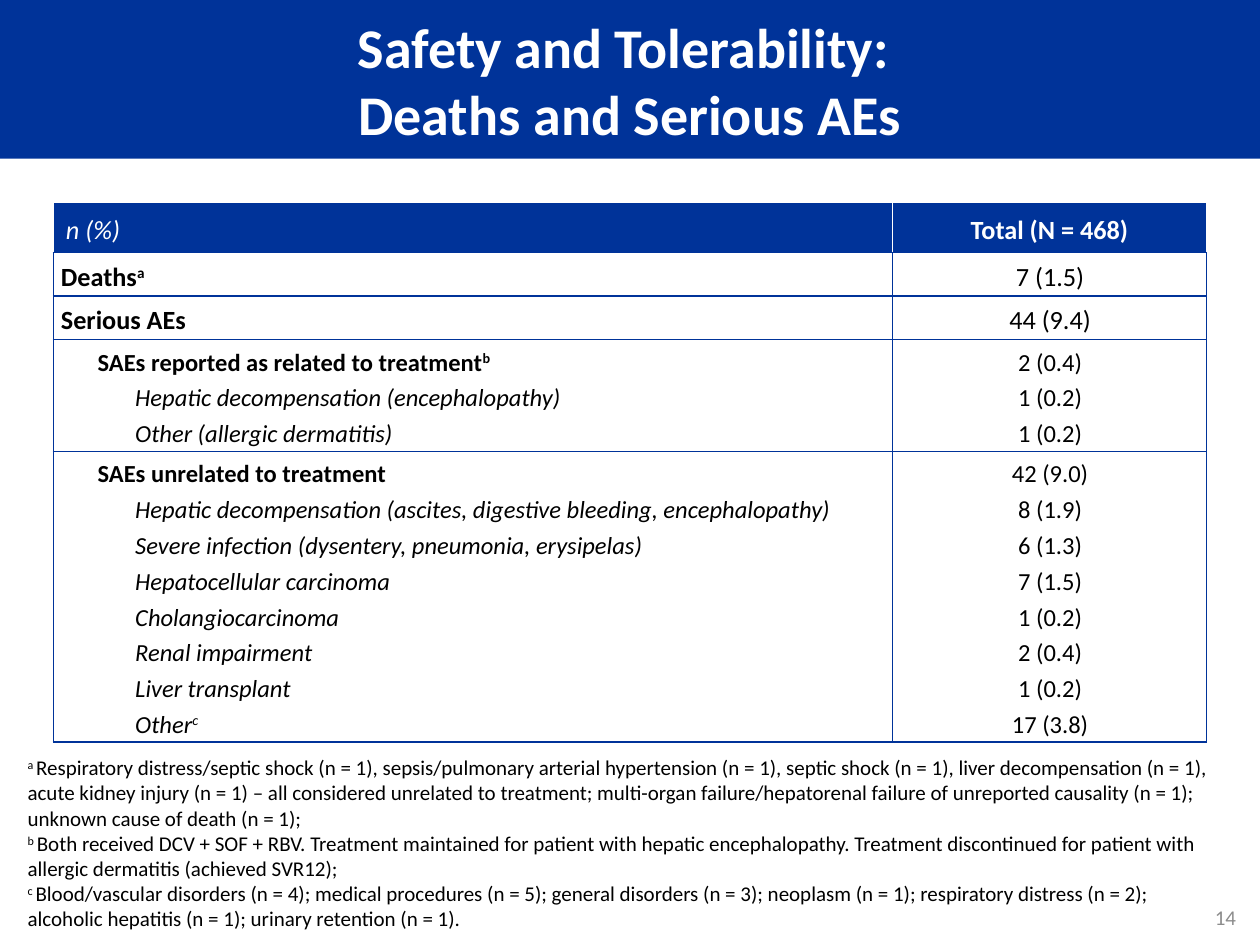
from lxml import etree
from pptx import Presentation
from pptx import util as u
from pptx.dml.color import RGBColor
from pptx.enum import shapes, text
from pptx.oxml import ns

Pt = u.Pt
FONT = "Calibri"
COLORS = {"blue": "003399", "white": "FFFFFF", "black": "000000", "gray": "8C8C8C"}
LEFT, CENTER, RIGHT = text.PP_ALIGN.LEFT, text.PP_ALIGN.CENTER, text.PP_ALIGN.RIGHT

# Each line: label, superscript mark, value, style
TABLE_ROWS = [
    [("Deaths", "a", "7 (1.5)", "main")],
    [("Serious AEs", "", "44 (9.4)", "main")],
    [("SAEs reported as related to treatment", "b", "2 (0.4)", "group"),
     ("Hepatic decompensation (encephalopathy)", "", "1 (0.2)", "detail"),
     ("Other (allergic dermatitis)", "", "1 (0.2)", "detail")],
    [("SAEs unrelated to treatment", "", "42 (9.0)", "group"),
     ("Hepatic decompensation (ascites, digestive bleeding, encephalopathy)",
      "", "8 (1.9)", "detail"),
     ("Severe infection (dysentery, pneumonia, erysipelas)", "", "6 (1.3)", "detail"),
     ("Hepatocellular carcinoma", "", "7 (1.5)", "detail"),
     ("Cholangiocarcinoma", "", "1 (0.2)", "detail"),
     ("Renal impairment", "", "2 (0.4)", "detail"),
     ("Liver transplant", "", "1 (0.2)", "detail"),
     ("Other", "c", "17 (3.8)", "detail")],
]
# Style: size, bold, italic, indent
STYLES = {"main": (15, True, False, 0), "group": (14, True, False, 21),
          "detail": (14, False, True, 42.5)}
ROW_HEIGHTS = [28.5, 24.8, 24.8, 64, 166]
COLUMN_WIDTHS = [479.5, 179.5]

FOOTNOTES = [
    ("a ", ["Respiratory distress/septic shock (n = 1), sepsis/pulmonary arterial hypertension "
            "(n = 1), septic shock (n = 1), liver decompensation (n = 1), ",
            "acute kidney injury (n = 1) – all considered unrelated to treatment; multi-organ "
            "failure/hepatorenal failure of unreported causality (n = 1); ",
            "unknown cause of death (n = 1);"]),
    ("b ", ["Both received DCV + SOF + RBV. Treatment maintained for patient with hepatic "
            "encephalopathy. Treatment discontinued for patient with ",
            "allergic dermatitis (achieved SVR12);"]),
    ("c ", ["Blood/vascular disorders (n = 4); medical procedures (n = 5); general disorders "
            "(n = 3); neoplasm (n = 1); respiratory distress (n = 2); ",
            "alcoholic hepatitis (n = 1); urinary retention (n = 1)."]),
]


def color(name):
    return RGBColor.from_string(COLORS[name])


def add_span(para, words, size, tint="black", bold=False, italic=False, raised=False):
    span = para.add_run()
    span.text = words
    font = span.font
    font.name, font.size, font.bold, font.italic = FONT, Pt(size), bold, italic
    font.color.rgb = color(tint)
    if raised:
        span._r.get_or_add_rPr().set("baseline", "30000")


def add_lines(para, lines, size, **look):
    for i, line in enumerate(lines):
        if i:
            para.add_line_break()
        add_span(para, line, size, **look)


def next_para(frame, first, align=LEFT, spacing=None):
    para = frame.paragraphs[0] if first else frame.add_paragraph()
    para.alignment = align
    if spacing:
        para.line_spacing = spacing
    return para


def set_margins(target, left, top, right, bottom):
    target.margin_left, target.margin_top = Pt(left), Pt(top)
    target.margin_right, target.margin_bottom = Pt(right), Pt(bottom)


def set_borders(cell, **sides):
    props = cell._tc.get_or_add_tcPr()
    for side in "LRTB":
        line = etree.SubElement(props, ns.qn("a:ln" + side), w=str(Pt(1)))
        fill = etree.SubElement(line, ns.qn("a:solidFill"))
        etree.SubElement(fill, ns.qn("a:srgbClr"), val=COLORS[sides.get(side, "blue")])


def add_title(page, box):
    band = page.shapes.add_shape(shapes.MSO_SHAPE.RECTANGLE, *map(Pt, box))
    band.shadow.inherit = False
    band.fill.solid()
    band.fill.fore_color.rgb = color("blue")
    band.line.fill.background()
    frame = band.text_frame
    frame.word_wrap = True
    frame.vertical_anchor = text.MSO_ANCHOR.MIDDLE
    add_lines(next_para(frame, True, CENTER),
              ["Safety and Tolerability: ", "Deaths and Serious AEs"],
              32, tint="white", bold=True)


def add_safety_table(page, box):
    table = page.shapes.add_table(len(ROW_HEIGHTS), len(COLUMN_WIDTHS), *map(Pt, box)).table
    for column, width in zip(table.columns, COLUMN_WIDTHS):
        column.width = Pt(width)
    for row, height in zip(table.rows, ROW_HEIGHTS):
        row.height = Pt(height)

    # Header row
    for i, (label, align) in enumerate([("n (%)", LEFT), ("Total (N = 468)", CENTER)]):
        cell = table.cell(0, i)
        set_borders(cell, L="white", R="white", T="white")
        cell.fill.solid()
        cell.fill.fore_color.rgb = color("blue")
        cell.vertical_anchor = text.MSO_ANCHOR.TOP if i else text.MSO_ANCHOR.BOTTOM
        para = next_para(cell.text_frame, True, align, 1.2)
        add_span(para, label, 15, "white", bold=i == 1, italic=i == 0)

    # Body rows
    for r, lines in enumerate(TABLE_ROWS, 1):
        label_cell, value_cell = table.cell(r, 0), table.cell(r, 1)
        for cell in (label_cell, value_cell):
            set_margins(cell, 4.3, 1.4, 3.6, 1.4)
            set_borders(cell, T="blue")
            cell.fill.background()
        for i, (label, mark, value, style) in enumerate(lines):
            size, bold, italic, indent = STYLES[style]
            para = next_para(label_cell.text_frame, i == 0, LEFT, 1.2)
            para._p.get_or_add_pPr().set("marL", str(Pt(indent)))
            add_span(para, label, size, bold=bold, italic=italic)
            if mark:
                add_span(para, mark, size, bold=bold, italic=italic, raised=True)
            add_span(next_para(value_cell.text_frame, i == 0, CENTER, 1.2), value, size)


def add_footnotes(page, box):
    frame = page.shapes.add_textbox(*map(Pt, box)).text_frame
    frame.word_wrap = True
    frame.vertical_anchor = text.MSO_ANCHOR.BOTTOM
    set_margins(frame, 0, 0, 0, 0)
    for i, (mark, lines) in enumerate(FOOTNOTES):
        para = next_para(frame, i == 0)
        add_span(para, mark, 12, raised=True)
        add_lines(para, lines, 12)


def add_page_number(page, box):
    frame = page.shapes.add_textbox(*map(Pt, box)).text_frame
    frame.word_wrap = False
    frame.vertical_anchor = text.MSO_ANCHOR.MIDDLE
    add_span(next_para(frame, True, RIGHT), "14", 12, "gray")


def main():
    deck = Presentation()
    deck.slide_width, deck.slide_height = Pt(720), Pt(540)
    page = deck.slides.add_slide(deck.slide_layouts[6])
    add_title(page, (0, 0, 720, 90.7))
    add_page_number(page, (686.9, 513.4, 26.6, 21.6))
    add_footnotes(page, (15.8, 430.6, 692.6, 101.5))
    add_safety_table(page, (30.5, 115.5, sum(COLUMN_WIDTHS), sum(ROW_HEIGHTS)))
    deck.save("out.pptx")


if __name__ == "__main__":
    main()
